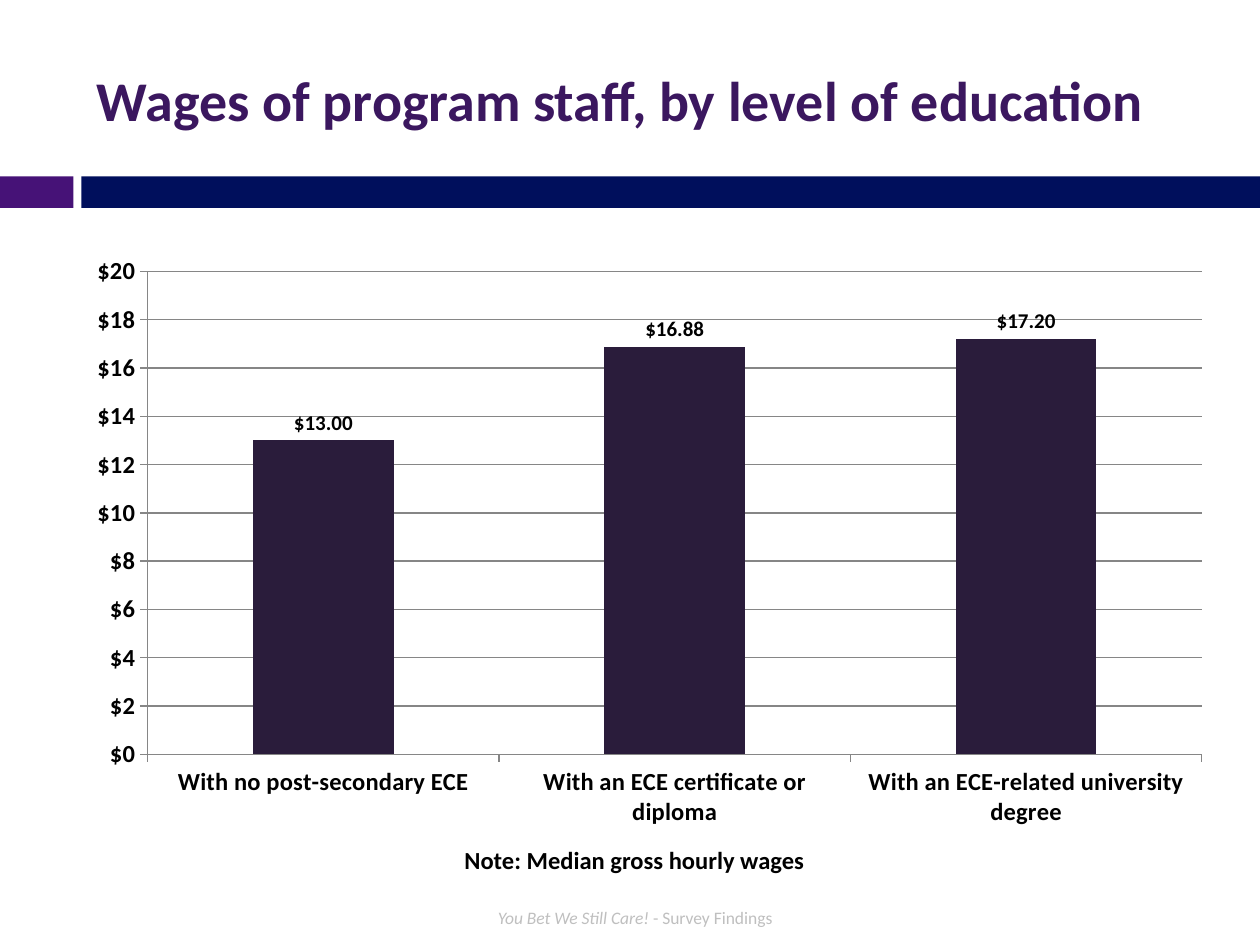
import pptx
import pptx.util
import pptx.chart.data
import pptx.dml.color
import pptx.enum.chart
import pptx.enum.shapes
import pptx.enum.text

Pt = pptx.util.Pt
RGB = pptx.dml.color.RGBColor.from_string
kinds = pptx.enum.chart
align = pptx.enum.text.PP_ALIGN
anchor = pptx.enum.text.MSO_ANCHOR

# Theme: colours and type sizes
theme = {
    "face": "Calibri",
    "ink": "000000", "title": "3B175F", "foot": "BFBFBF",
    "purple": "461277", "navy": "000F5C", "bar": "2A1C3B", "rule": "868686",
    "head": 32, "body": 14, "label": 12, "small": 10,
}


def style(font, size, ink, **more):
    form = {"name": theme["face"], "size": Pt(theme[size]), **more}
    for key, value in form.items():
        setattr(font, key, value)
    font.color.rgb = RGB(theme[ink])


deck = pptx.Presentation()
deck.slide_width, deck.slide_height = Pt(720), Pt(540)
slide = deck.slides.add_slide(deck.slide_layouts[6])

# Band under the title
for left, width, fill in [(0, 42, "purple"), (46.5, 673.5, "navy")]:
    band = slide.shapes.add_shape(
        pptx.enum.shapes.MSO_SHAPE.RECTANGLE,
        Pt(left), Pt(100.8), Pt(width), Pt(18))
    band.shadow.inherit = False
    band.fill.solid()
    band.fill.fore_color.rgb = RGB(theme[fill])
    band.line.fill.background()

# Wage chart
data = pptx.chart.data.CategoryChartData()
data.categories = [
    "With no post-secondary ECE",
    "With an ECE certificate or diploma",
    "With an ECE-related university degree",
]
data.add_series("Series 1", [13, 16.88, 17.2])
chart = slide.shapes.add_chart(
    kinds.XL_CHART_TYPE.COLUMN_CLUSTERED,
    Pt(42.5), Pt(139.7), Pt(657.4), Pt(339.8), data).chart
chart.has_legend = chart.has_title = False
style(chart.font, "body", "ink", bold=True)

# Axes and grid
cost = chart.value_axis
form = {"minimum_scale": 0, "maximum_scale": 20, "major_unit": 2,
        "has_major_gridlines": True}
for key, value in form.items():
    setattr(cost, key, value)
cost.tick_labels.number_format = '"$"#,##0'
cost.tick_labels.number_format_is_linked = False
for axis in (cost, chart.category_axis):
    axis.major_tick_mark = kinds.XL_TICK_MARK.OUTSIDE
    axis.minor_tick_mark = kinds.XL_TICK_MARK.NONE
for part in (cost, chart.category_axis, cost.major_gridlines):
    part.format.line.color.rgb = RGB(theme["rule"])
    part.format.line.width = Pt(0.75)

# Columns and their labels
plot = chart.plots[0]
plot.gap_width = 150
plot.vary_by_categories = False
bars = plot.series[0]
bars.format.fill.solid()
bars.format.fill.fore_color.rgb = RGB(theme["bar"])
form = {"show_value": True, "number_format": '"$"#,##0.00',
        "number_format_is_linked": False,
        "position": kinds.XL_LABEL_POSITION.OUTSIDE_END}
for key, value in form.items():
    setattr(bars.data_labels, key, value)
style(bars.data_labels.font, "label", "ink", bold=True)

# Title, note and footer
bold = {"bold": True}
texts = [
    ((48.2, 33.8, 658, 46), anchor.MIDDLE, align.LEFT, "head", "title",
     [("Wages of program staff, by level of education", bold)]),
    ((252, 479.5, 221, 24.5), anchor.TOP, align.CENTER, "body", "ink",
     [("Note: Median gross hourly wages", bold)]),
    ((252, 514, 221.8, 21), anchor.MIDDLE, align.CENTER, "small", "foot",
     [("You Bet We Still Care! ", {"italic": True}),
      ("- Survey Findings", {})]),
]
for place, side, flow, size, ink, runs in texts:
    frame = slide.shapes.add_textbox(*map(Pt, place)).text_frame
    frame.word_wrap = True
    frame.vertical_anchor = side
    line = frame.paragraphs[0]
    line.alignment = flow
    for words, more in runs:
        run = line.add_run()
        run.text = words
        style(run.font, size, ink, **more)

deck.save("out.pptx")
